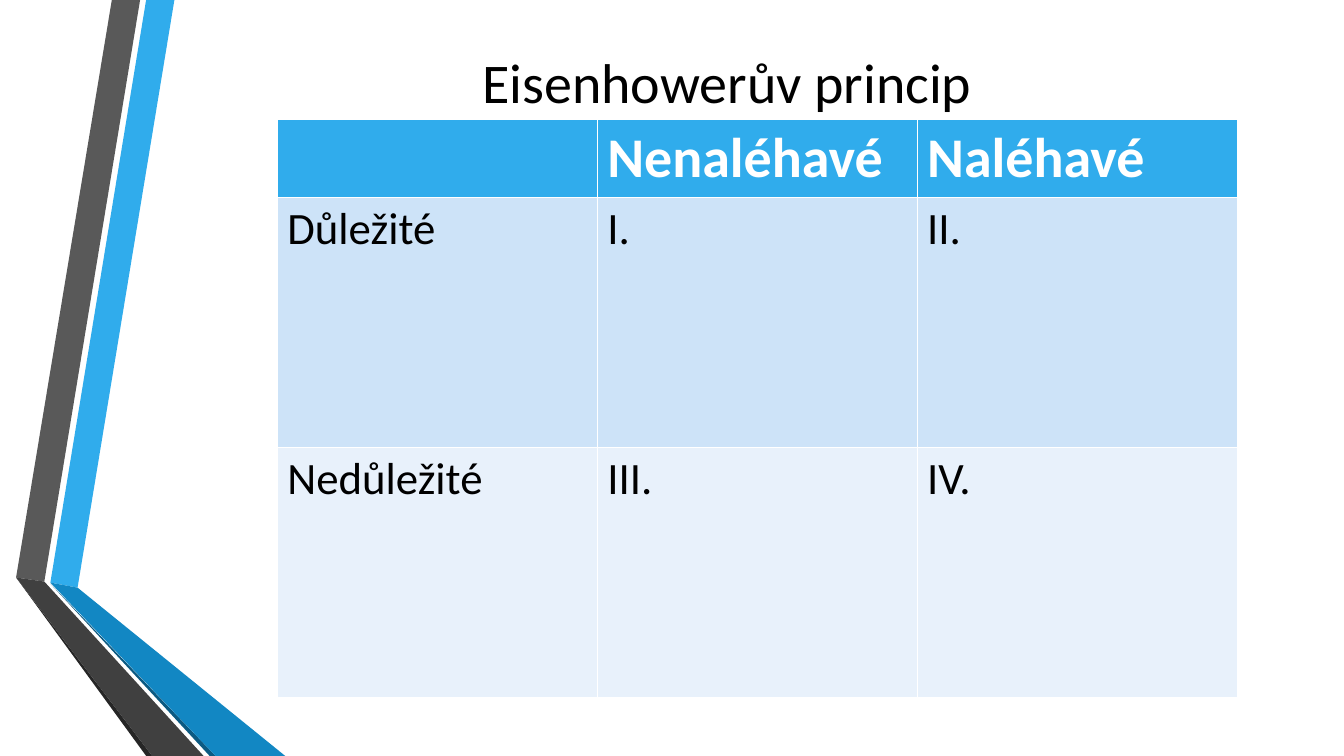
from pptx import Presentation
from pptx.dml.color import RGBColor
from pptx.enum.text import MSO_ANCHOR, PP_ALIGN
from pptx.util import Inches, Pt

CENTER = PP_ALIGN.CENTER
MIDDLE = MSO_ANCHOR.MIDDLE

BLACK = RGBColor(0x00, 0x00, 0x00)
WHITE = RGBColor(0xFF, 0xFF, 0xFF)
BLUE = RGBColor(0x30, 0xAC, 0xEC)
MID_BLUE = RGBColor(0x12, 0x87, 0xC3)
DARK_BLUE = RGBColor(0x0C, 0x5A, 0x82)
GRAY = RGBColor(0x59, 0x59, 0x59)
DARK_GRAY = RGBColor(0x40, 0x40, 0x40)
NEAR_BLACK = RGBColor(0x26, 0x26, 0x26)
BAND = RGBColor(0xCD, 0xE3, 0xF8)
PALE_BAND = RGBColor(0xE8, 0xF1, 0xFB)
FONT = "Calibri"

prs = Presentation()
prs.slide_width = Inches(13.33)
prs.slide_height = Inches(7.5)
slide = prs.slides.add_slide(prs.slide_layouts[5])
shapes = slide.shapes

# Folded ribbons on the left
ribbons = [
    (BLUE, [(0.5, 5.78), (0.77, 5.83), (1.73, 0), (1.45, 0)]),
    (GRAY, [(1.39, 0), (1.11, 0), (0.16, 5.73), (0.44, 5.77)]),
    (NEAR_BLACK, [(0.16, 5.73), (1.45, 7.5), (1.51, 7.5)]),
    (DARK_BLUE, [(0.5, 5.79), (2.08, 7.5), (2.14, 7.5)]),
    (MID_BLUE, [(0.5, 5.78), (2.14, 7.5), (2.83, 7.5), (0.77, 5.83)]),
    (DARK_GRAY, [(2.02, 7.5), (0.44, 5.77), (0.16, 5.73), (1.51, 7.5)]),
]
for color, points in ribbons:
    start, *rest = [(Inches(x), Inches(y)) for x, y in points]
    path = shapes.build_freeform(*start)
    path.add_line_segments(rest, close=True)
    ribbon = path.convert_to_shape()
    ribbon.shadow.inherit = False
    ribbon.fill.solid()
    ribbon.fill.fore_color.rgb = color
    ribbon.line.fill.background()

# Title
title = shapes.title
title.left, title.top = Inches(1.73), Inches(0.22)
title.width, title.height = Inches(10.96), Inches(1.16)
title.text_frame.text = "Eisenhowerův princip"
title.text_frame.vertical_anchor = MIDDLE
head = title.text_frame.paragraphs[0]
head.alignment = CENTER
head.font.name = FONT
head.font.size = Pt(40)
head.font.color.rgb = BLACK

# Matrix: the default table style draws the white borders
rows = [
    (0.77, BLUE, ["", "Nenaléhavé", "Naléhavé"]),
    (2.48, BAND, ["Důležité", "I.", "II."]),
    (2.48, PALE_BAND, ["Nedůležité", "III.", "IV."]),
]
total = sum(height for height, _, _ in rows)
table = shapes.add_table(3, 3, Inches(2.75), Inches(1.18),
                         Inches(9.52), Inches(total)).table
for r, (height, color, texts) in enumerate(rows):
    table.rows[r].height = Inches(height)
    for c, text in enumerate(texts):
        cell = table.cell(r, c)
        cell.fill.solid()
        cell.fill.fore_color.rgb = color
        cell.text = text
        para = cell.text_frame.paragraphs[0]
        para.font.name = FONT
        para.font.bold = r == 0
        para.font.size = Pt(40 if r == 0 else 32)
        para.font.color.rgb = WHITE if r == 0 else BLACK
        if r > 0:
            para.space_before = para.space_after = Pt(18)

prs.save("out.pptx")
